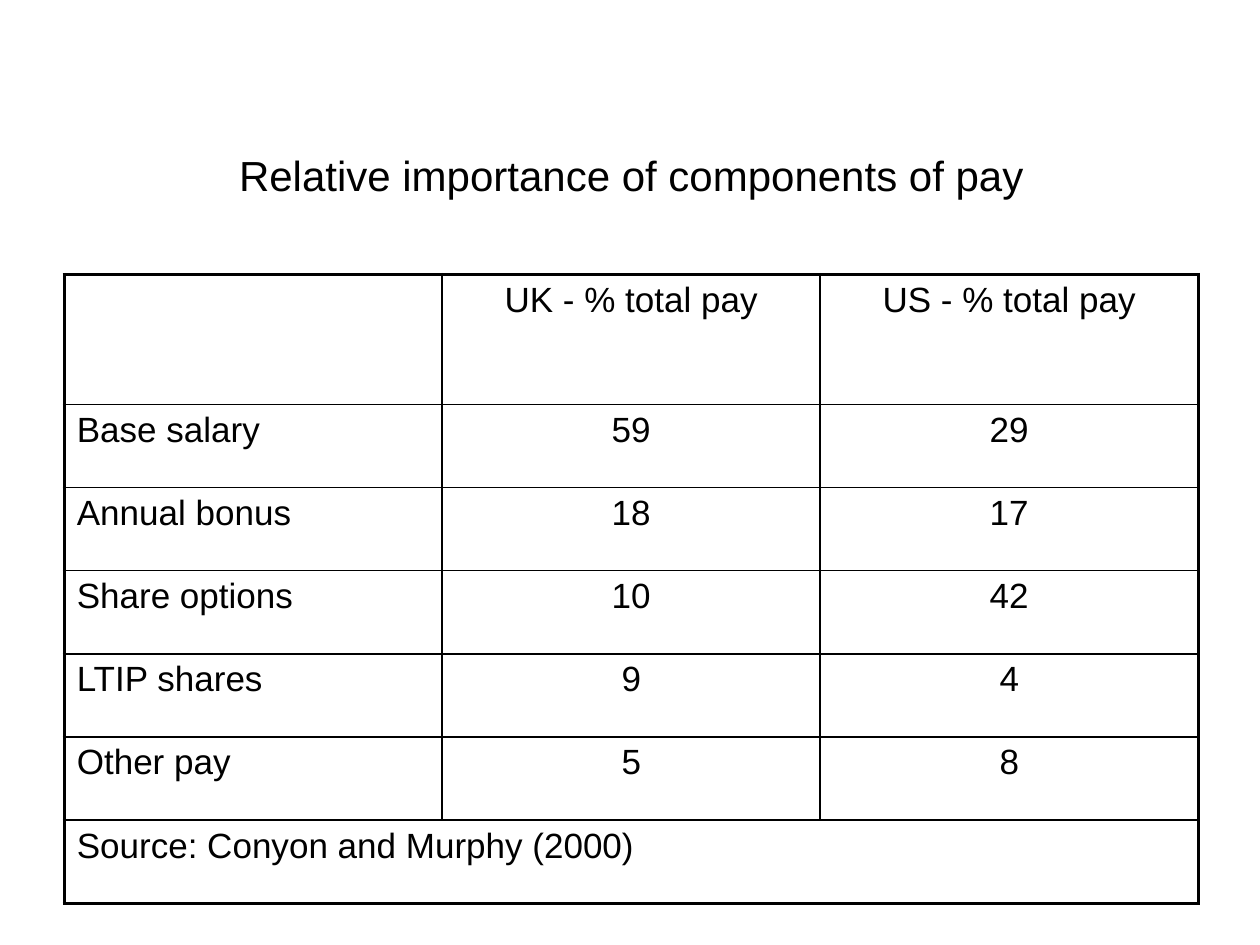
from dataclasses import dataclass

from lxml.etree import SubElement
from pptx import Presentation
from pptx.dml.color import RGBColor
from pptx.enum.text import MSO_ANCHOR as Anchor, PP_ALIGN as Align
from pptx.oxml.ns import qn
from pptx.util import Inches, Pt

FONT = "Arial"
BLACK = "000000"
LEFT, WIDTH = 0.51, 9
HEADER_HEIGHT, ROW_HEIGHT = 1.03, 0.66
OUTER_LINE, INNER_LINE = 2.25, 1


@dataclass
class PayRow:
    label: str
    uk: str = ""
    us: str = ""

    def texts(self) -> tuple:
        return self.label, self.uk, self.us


PAY_ROWS = [
    PayRow("", "UK - % total pay", "US - % total pay"),
    PayRow("Base salary", "59", "29"),
    PayRow("Annual bonus", "18", "17"),
    PayRow("Share options", "10", "42"),
    PayRow("LTIP shares", "9", "4"),
    PayRow("Other pay", "5", "8"),
    PayRow("Source: Conyon and Murphy (2000)"),
]


def color(value: str) -> RGBColor:
    return RGBColor.from_string(value)


def format_paragraph(paragraph, size: float, alignment) -> None:
    paragraph.alignment = alignment
    paragraph.space_before = Pt(0)
    paragraph.font.name = FONT
    paragraph.font.size = Pt(size)
    paragraph.font.color.rgb = color(BLACK)


def add_title(slide, text: str) -> None:
    title = slide.shapes.title
    title.left, title.top = Inches(LEFT), Inches(0.76)
    title.width, title.height = Inches(WIDTH), Inches(1.25)
    title.text_frame.text = text
    title.text_frame.vertical_anchor = Anchor.MIDDLE
    format_paragraph(title.text_frame.paragraphs[0], 24, Align.CENTER)


def draw_borders(cell, outer_sides: dict) -> None:
    properties = cell._tc.get_or_add_tcPr()
    for side, is_outer in outer_sides.items():
        width = OUTER_LINE if is_outer else INNER_LINE
        line = SubElement(properties, qn(f"a:ln{side}"), w=str(Pt(width)))
        fill = SubElement(line, qn("a:solidFill"))
        SubElement(fill, qn("a:srgbClr"), val=BLACK)


def add_pay_table(slide, pay_rows: list) -> None:
    row_count, column_count = len(pay_rows), 3
    last_row, last_column = row_count - 1, column_count - 1
    height = HEADER_HEIGHT + ROW_HEIGHT * last_row
    table = slide.shapes.add_table(
        row_count, column_count,
        Inches(LEFT), Inches(2.18), Inches(WIDTH), Inches(height),
    ).table
    table.first_row = table.horz_banding = False
    for row_index, pay_row in enumerate(pay_rows):
        row_height = ROW_HEIGHT if row_index else HEADER_HEIGHT
        table.rows[row_index].height = Inches(row_height)
        for column_index, text in enumerate(pay_row.texts()):
            cell = table.cell(row_index, column_index)
            cell.text = text
            alignment = Align.CENTER if column_index else Align.LEFT
            format_paragraph(cell.text_frame.paragraphs[0], 20, alignment)
            is_source = row_index == last_row
            draw_borders(cell, {
                "L": column_index == 0,
                "R": column_index == last_column or is_source,
                "T": row_index == 0,
                "B": is_source,
            })
            cell.fill.background()
    table.cell(last_row, 0).merge(table.cell(last_row, last_column))


def main() -> None:
    presentation = Presentation()
    presentation.slide_width, presentation.slide_height = Inches(10), Inches(7.5)
    slide = presentation.slides.add_slide(presentation.slide_layouts[5])
    add_title(slide, "Relative importance of components of pay")
    add_pay_table(slide, PAY_ROWS)
    presentation.save("out.pptx")


if __name__ == "__main__":
    main()
